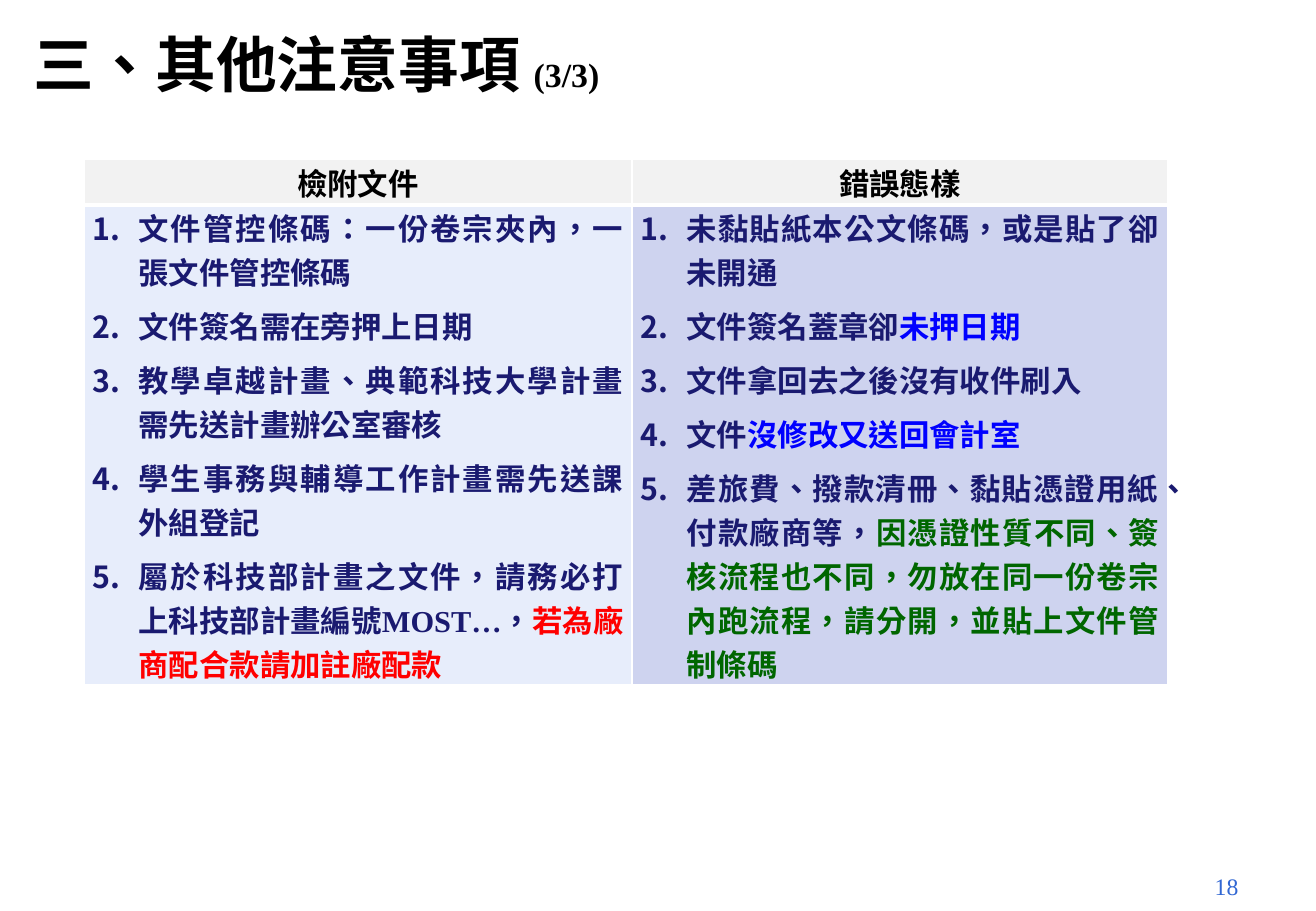
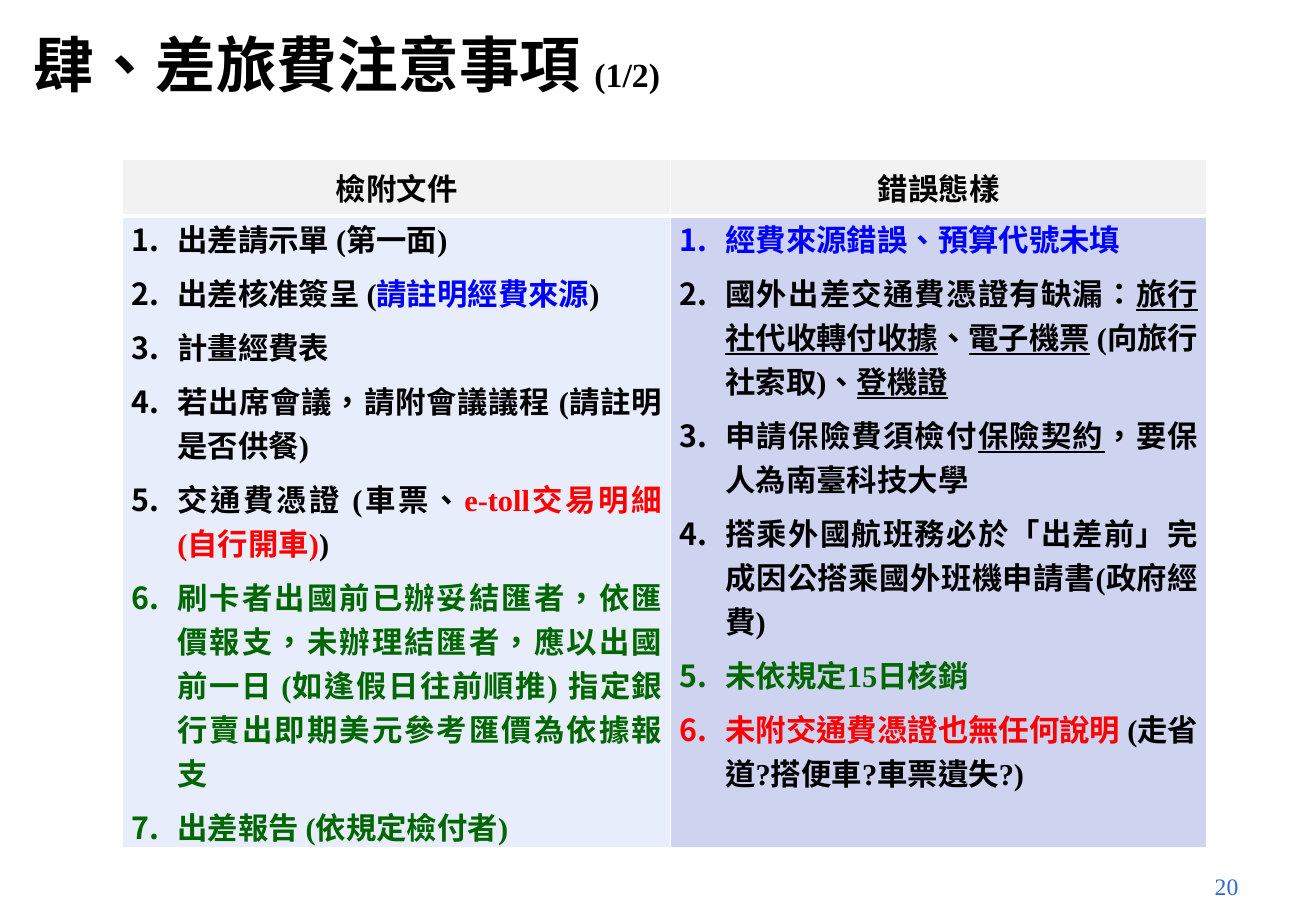
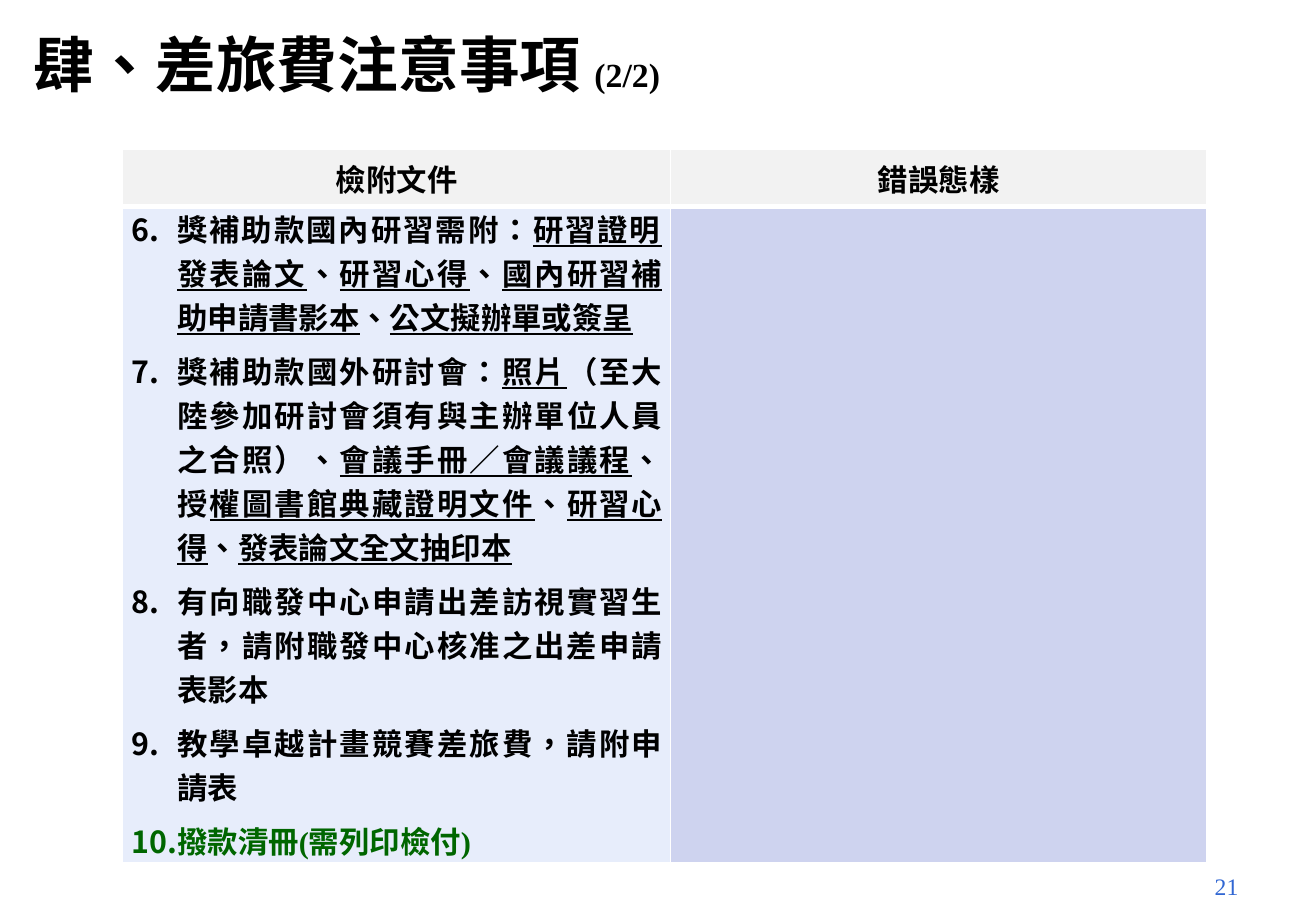
"""Build three slides on attachments and common errors in expense claims."""
from dataclasses import dataclass

from lxml import etree
from pptx import Presentation
from pptx import util as u
from pptx.dml.color import RGBColor
from pptx.enum import text
from pptx.oxml.ns import qn


@dataclass(frozen=True)
class Theme:
    black: str = "000000"
    navy: str = "1A1A70"
    red: str = "FF0000"
    blue: str = "0000FF"
    green: str = "006600"
    page: str = "3167D3"
    rule: str = "FFFFFF"
    head_fill: str = "F2F2F2"
    body_fills: tuple = ("E7EDFB", "CED3EF")
    latin: str = "Times New Roman"
    cjk: str = "Noto Sans CJK SC"
    title_size: int = 36
    part_size: int = 20
    body_size: int = 18
    page_size: int = 14


THEME = Theme()
HEADINGS = ("檢附文件", "錯誤態樣")
COLUMN_WIDTHS = (4.51, 4.41)
INDENT = u.Inches(0.38)


def red(words):
    return words, THEME.red, False


def blue(words):
    return words, THEME.blue, False


def green(words):
    return words, THEME.green, False


def under(words):
    return words, THEME.black, True


class Deck:
    def __init__(self, theme):
        self.theme = theme
        self.prs = Presentation()
        self.prs.slide_width = u.Inches(10.83)
        self.prs.slide_height = u.Inches(7.5)
        self.slide = None

    def start(self, heading, part, number):
        t = self.theme
        self.slide = self.prs.slides.add_slide(self.prs.slide_layouts[6])
        title = self.textbox(0.18, 0.23, 9.81, 0.58)
        title.vertical_anchor = text.MSO_ANCHOR.MIDDLE
        line = title.paragraphs[0]
        self.run(line, heading + " ", t.title_size, t.black)
        self.run(line, part, t.part_size, t.black)
        footer = self.textbox(7.76, 7.13, 2.53, 0.27).paragraphs[0]
        footer.alignment = text.PP_ALIGN.RIGHT
        self.run(footer, str(number), t.page_size, t.page, bold=False)

    def textbox(self, *box):
        frame = self.slide.shapes.add_textbox(*map(u.Inches, box)).text_frame
        frame.word_wrap = True
        return frame

    def run(self, paragraph, words, size, color, bold=True, underline=False):
        run = paragraph.add_run()
        run.text = words
        font = run.font
        font.size = u.Pt(size)
        font.bold = bold
        font.underline = underline or None
        font.color.rgb = RGBColor.from_string(color)
        font.name = self.theme.latin
        props = run._r.get_or_add_rPr()
        props.set("lang", "zh-TW")
        etree.SubElement(props, qn("a:ea"), typeface=self.theme.cjk)

    def cell(self, cell, fill, top, bottom):
        cell.margin_left = cell.margin_right = u.Inches(0.07)
        cell.margin_top = cell.margin_bottom = 0
        props = cell._tc.get_or_add_tcPr()
        for side, width in (("L", 1), ("R", 1), ("T", top), ("B", bottom)):
            edge = etree.SubElement(props, qn("a:ln" + side), w=str(u.Pt(width)))
            solid = etree.SubElement(edge, qn("a:solidFill"))
            etree.SubElement(solid, qn("a:srgbClr"), val=self.theme.rule)
        cell.fill.solid()
        cell.fill.fore_color.rgb = RGBColor.from_string(fill)

    def items(self, frame, entries, ink, first):
        for index, entry in enumerate(entries):
            item = frame.add_paragraph() if index else frame.paragraphs[0]
            item.alignment = text.PP_ALIGN.JUSTIFY
            item.space_before = u.Pt(3 if index else 0)
            item.space_after = u.Pt(3)
            props = item._p.get_or_add_pPr()
            props.set("marL", str(INDENT))
            props.set("indent", str(-INDENT))
            etree.SubElement(props, qn("a:buFont"), typeface=self.theme.cjk)
            numbering = etree.SubElement(props, qn("a:buAutoNum"), type="arabicPeriod")
            if first > 1:
                numbering.set("startAt", str(first))
            for piece in entry:
                words, color, underline = (
                    (piece, ink, False) if isinstance(piece, str) else piece)
                self.run(item, words, self.theme.body_size, color, underline=underline)

    def comparison(self, left, top, row_heights, columns, ink, first=1):
        t = self.theme
        table = self.slide.shapes.add_table(
            2, 2, u.Inches(left), u.Inches(top), u.Inches(sum(COLUMN_WIDTHS)),
            u.Inches(sum(row_heights))).table
        for row, height in zip(table.rows, row_heights):
            row.height = u.Inches(height)
        for col, (heading, entries) in enumerate(zip(HEADINGS, columns)):
            table.columns[col].width = u.Inches(COLUMN_WIDTHS[col])
            head, body = table.cell(0, col), table.cell(1, col)
            self.cell(head, t.head_fill, 1, 3)
            self.cell(body, t.body_fills[col], 3, 1)
            head.vertical_anchor = text.MSO_ANCHOR.MIDDLE
            label = head.text_frame.paragraphs[0]
            label.alignment = text.PP_ALIGN.CENTER
            self.run(label, heading, t.body_size, t.black)
            self.items(body.text_frame, entries, ink, first)


OTHER_DOCUMENTS = [
    ["文件管控條碼：一份卷宗夾內，一張文件管控條碼"],
    ["文件簽名需在旁押上日期"],
    ["教學卓越計畫、典範科技大學計畫需先送計畫辦公室審核"],
    ["學生事務與輔導工作計畫需先送課外組登記"],
    ["屬於科技部計畫之文件，請務必打上科技部計畫編號MOST…，",
     red("若為廠商配合款請加註廠配款")],
]
OTHER_ERRORS = [
    ["未黏貼紙本公文條碼，或是貼了卻未開通"],
    ["文件簽名蓋章卻", blue("未押日期")],
    ["文件拿回去之後沒有收件刷入"],
    ["文件", blue("沒修改又送回會計室")],
    ["差旅費、撥款清冊、黏貼憑證用紙、付款廠商等，",
     green("因憑證性質不同、簽核流程也不同，勿放在同一份卷宗內跑流程，"
           "請分開，並貼上文件管制條碼")],
]
TRAVEL_DOCUMENTS = [
    ["出差請示單 (第一面)"],
    ["出差核准簽呈 (", blue("請註明經費來源"), ")"],
    ["計畫經費表"],
    ["若出席會議，請附會議議程 (請註明是否供餐)"],
    ["交通費憑證 (車票、", red("e-toll交易明細(自行開車)"), ")"],
    [green("刷卡者出國前已辦妥結匯者，依匯價報支，未辦理結匯者，應以出國前一日 "
           "(如逢假日往前順推) 指定銀行賣出即期美元參考匯價為依據報支")],
    [green("出差報告 (依規定檢付者)")],
]
TRAVEL_ERRORS = [
    [blue("經費來源錯誤、預算代號未填")],
    ["國外出差交通費憑證有缺漏：", under("旅行社代收轉付收據"), "、",
     under("電子機票"), " (向旅行社索取)、", under("登機證")],
    ["申請保險費須檢付", under("保險契約"), "，要保人為南臺科技大學"],
    ["搭乘外國航班務必於「出差前」完成因公搭乘國外班機申請書(政府經費)"],
    [green("未依規定15日核銷")],
    [red("未附交通費憑證也無任何說明 "), "(走省道?搭便車?車票遺失?)"],
]
GRANT_DOCUMENTS = [
    ["獎補助款國內研習需附：", under("研習證明"), "、", under("發表論文"), "、",
     under("研習心得"), "、", under("國內研習補助申請書影本"), "、",
     under("公文擬辦單或簽呈")],
    ["獎補助款國外研討會：", under("照片"),
     "（至大陸參加研討會須有與主辦單位人員之合照）、",
     under("會議手冊／會議議程"), "、授", under("權圖書館典藏證明文件"), "、",
     under("研習心得"), "、", under("發表論文全文抽印本")],
    ["有向職發中心申請出差訪視實習生者，請附職發中心核准之出差申請表影本"],
    ["教學卓越計畫競賽差旅費，請附申請表"],
    [green("撥款清冊(需列印檢付)")],
]


def main():
    deck = Deck(THEME)
    deck.start("三、其他注意事項", "(3/3)", 18)
    deck.comparison(0.69, 1.31, (0.38, 3.95), (OTHER_DOCUMENTS, OTHER_ERRORS), THEME.navy)
    deck.start("肆、差旅費注意事項", "(1/2)", 20)
    deck.comparison(1.01, 1.31, (0.47, 5.2), (TRAVEL_DOCUMENTS, TRAVEL_ERRORS), THEME.black)
    deck.start("肆、差旅費注意事項", "(2/2)", 21)
    deck.comparison(1.01, 1.23, (0.47, 5.4), (GRANT_DOCUMENTS, []), THEME.black, first=6)
    deck.prs.save("out.pptx")


if __name__ == "__main__":
    main()
